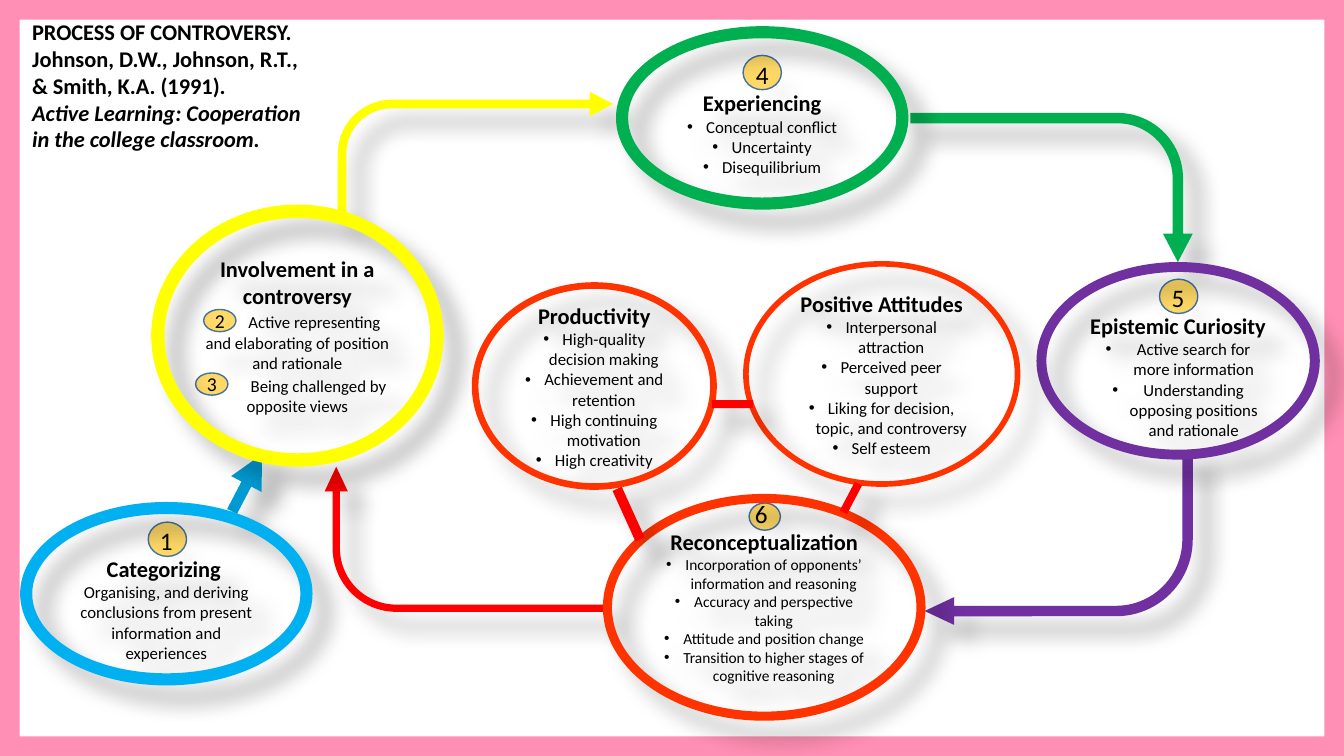
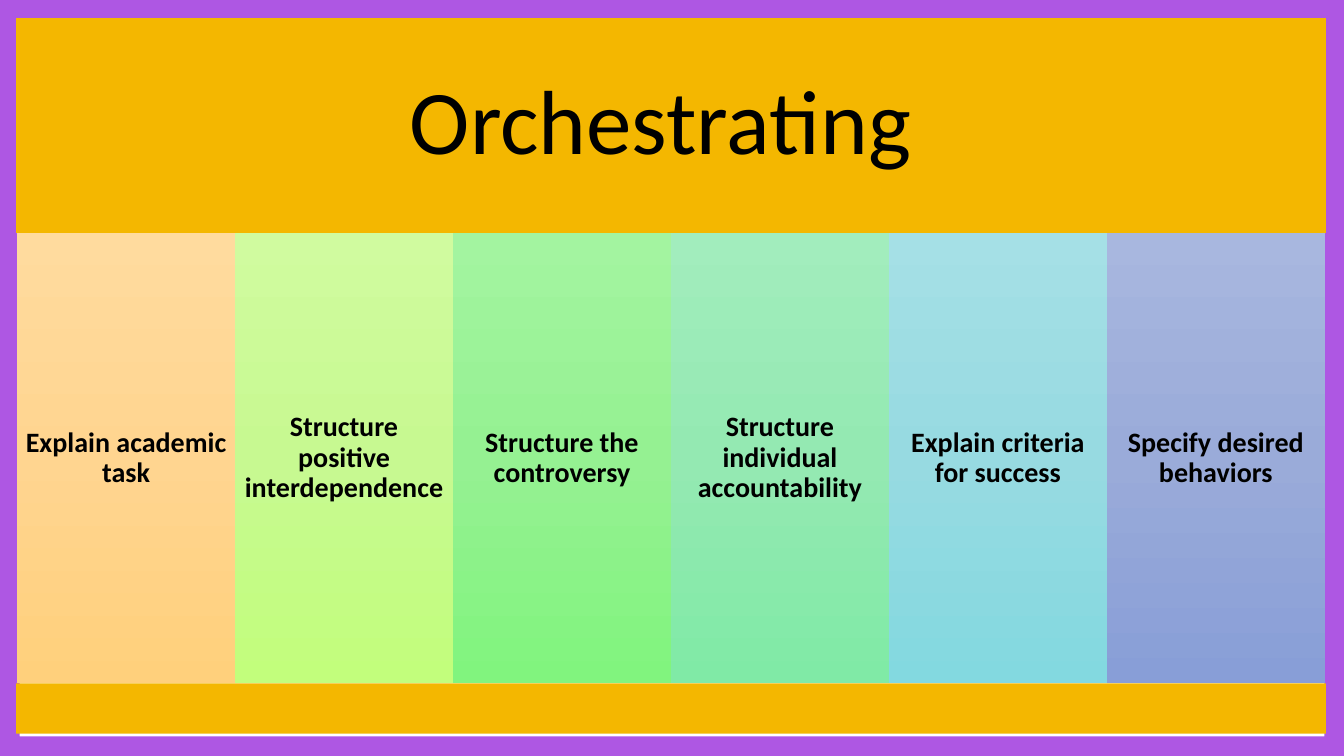
from copy import deepcopy

from lxml.etree import SubElement
from pptx import Presentation
from pptx.dml.color import RGBColor
from pptx.enum.shapes import MSO_SHAPE
from pptx.enum.text import MSO_ANCHOR, PP_ALIGN
from pptx.oxml.ns import qn
from pptx.util import Emu, Pt

# Scale and palette
PX = 9144
WIDTH, HEIGHT = 1333, 750
FONT = "Calibri"
BLACK = RGBColor(0, 0, 0)
PINK = RGBColor(0xFF, 0x8F, 0xB4)
PURPLE = RGBColor(0xAE, 0x57, 0xE3)
AMBER = RGBColor(0xF4, 0xB7, 0x00)
YELLOW = RGBColor(0xFF, 0xFF, 0x00)
GREEN = RGBColor(0x00, 0xB0, 0x50)
RED = RGBColor(0xFF, 0x00, 0x00)
ORANGE = RGBColor(0xFF, 0x33, 0x00)
VIOLET = RGBColor(0x70, 0x30, 0xA0)
SKY = RGBColor(0x00, 0xB0, 0xF0)
BLUE = RGBColor(0x00, 0x9B, 0xD2)
GOLD = RGBColor(0xFF, 0xD9, 0x66)
BADGE_EDGE = RGBColor(0x43, 0x73, 0x9E)

# Format values: font settings and paragraph indents (left, first line)
NUMBER = {"size": Pt(18)}
STEP_NUMBER = {"size": Pt(14)}
HEADING = {"size": Pt(16), "bold": True}
BOOK = {"size": Pt(16), "bold": True, "italic": True}
BODY = {"size": Pt(12)}
SMALL = {"size": Pt(11)}
BANNER = {"size": Pt(65)}
COLUMN = {"size": Pt(20), "bold": True}
BULLET, WIDE_BULLET = (19, -19), (31, -31)

# Slide 1: arrows as (preset, box, rotation, adjustments, colour)
BENT, BAR = MSO_SHAPE.BENT_ARROW, MSO_SHAPE.PENTAGON
ARROWS = [
    (BENT, (335, 91, 273, 122), 0, (0.07, 0.1, 0.19, 0.44), YELLOW),
    (BENT, (969, 46, 148, 280), 90, (0.07, 0.1, 0.19, 0.44), GREEN),
    (BENT, (388, 397, 144, 276), 270, (0.05, 0.08, 0.17, 0.44), RED),
    (BENT, (917, 447, 266, 173), 180, (0.06, 0.08, 0.17, 0.44), VIOLET),
    (MSO_SHAPE.RIGHT_ARROW, (213, 462, 64, 34), 297.6, (0.32, 0.98), BLUE),
]
LINKS = [
    (BAR, (706, 397, 41, 8), 180, (0,), RED),
    (BAR, (828, 490, 32, 8), 297.8, (0,), RED),
    (BAR, (596, 505, 55, 10), 245.6, (0,), RED),
]

# Badges as (box, number shown inside)
BADGES = [
    ((147, 518, 38, 34), ""),
    ((202, 307, 32, 22), "2"),
    ((194, 370, 32, 22), "3"),
    ((737, 55, 38, 34), ""),
    ((1150, 277, 38, 34), ""),
    ((743, 499, 31, 27), ""),
]


def bullets(style, indent, *texts):
    return [(text, style, indent) for text in texts]


# Rings as (box, thickness, colour, bottom inset, lines)
RINGS = [
    ((20, 498, 290, 182), 0.066, SKY, 5, [
        ("1", NUMBER), ("Categorizing ", HEADING),
        ("Organising, and deriving conclusions from present information "
         "and experiences", BODY)]),
    ((150, 203, 290, 260), 0.051, YELLOW, 5, [
        ("Involvement in a controversy", HEADING),
        ("Active representing and elaborating of position and rationale",
         BODY, (0, 34), 2),
        ("Being challenged by opposite views", BODY, (0, 42), 2)]),
    ((611, 26, 290, 182), 0.066, GREEN, 5, [
        ("4", NUMBER), ("Experiencing", HEADING),
        *bullets(BODY, BULLET, "Conceptual conflict", "Uncertainty",
                 "Disequilibrium")]),
    ((1028, 260, 281, 196), 0.05, VIOLET, 5, [
        ("5", NUMBER), ("Epistemic Curiosity ", HEADING),
        *bullets(BODY, WIDE_BULLET, "Active search for more information",
                 "Understanding opposing positions and rationale")]),
    ((468, 280, 243, 206), 0.032, ORANGE, 5, [
        ("Productivity", HEADING),
        *bullets(BODY, BULLET, "High-quality decision making",
                 "Achievement and retention", "High continuing motivation",
                 "High creativity")]),
    ((598, 490, 320, 225), 0.04, ORANGE, 36, [
        ("6 ", NUMBER), ("Reconceptualization", HEADING),
        *bullets(SMALL, BULLET,
                 "Incorporation of opponents’ information and reasoning",
                 "Accuracy and perspective taking",
                 "Attitude and position change",
                 "Transition to higher stages of cognitive reasoning")]),
    ((737, 259, 275, 224), 0.025, ORANGE, 5, [
        ("Positive Attitudes", HEADING),
        *bullets(BODY, BULLET, "Interpersonal attraction",
                 "Perceived peer support",
                 "Liking for decision, topic, and controversy",
                 "Self esteem")]),
]
CITATION = [
    ("PROCESS OF CONTROVERSY. Johnson, D.W., Johnson, R.T., "
     "& Smith, K.A. (1991).", HEADING),
    ("Active Learning: Cooperation in the college classroom.", BOOK),
]

# Slide 2: columns as (label, gradient from top to bottom)
COLUMNS = [
    ("Explain academic task", ("FFDB9E", "FFD590", "FFD07C")),
    ("Structure positive interdependence", ("D0FB9F", "C7F991", "C2FE7C")),
    ("Structure the controversy", ("A3F4A0", "95F192", "81F47E")),
    ("Structure individual accountability", ("A2EDBD", "94E9B2", "80EAA6")),
    ("Explain criteria for success", ("A5E0E6", "97DAE1", "83D9E0")),
    ("Specify desired behaviors", ("A8B7DF", "9AABD9", "889ED7")),
]
BAND_LEFT, BAND_WIDTH = 16, 1299
COLUMNS_LEFT, COLUMNS_RIGHT = 17, 1314
COLUMNS_TOP, COLUMNS_BOTTOM = 231, 678


def place(box):
    return [Emu(round(length * PX)) for length in box]


def write(holder, lines, insets=(10, 5, 10, 5), align=PP_ALIGN.CENTER,
          anchor=MSO_ANCHOR.MIDDLE, spacing=None):
    """Fill a text frame; a line is (text, font, indent, space before)."""
    frame = holder.text_frame
    left, top, right, bottom = place(insets)
    settings = {"word_wrap": True, "vertical_anchor": anchor,
                "margin_left": left, "margin_top": top,
                "margin_right": right, "margin_bottom": bottom}
    for name, value in settings.items():
        setattr(frame, name, value)
    for index, (text, style, *layout) in enumerate(lines):
        para = frame.add_paragraph() if index else frame.paragraphs[0]
        para.alignment = align
        if spacing:
            para.line_spacing = spacing
        if layout:
            margin, first = layout[0]
            props = para._p.get_or_add_pPr()
            props.set("marL", str(margin * PX))
            props.set("indent", str(first * PX))
            if first < 0:
                SubElement(props, qn("a:buFont"), typeface="Arial")
                SubElement(props, qn("a:buChar"), char="•")
            else:
                para.space_before = Pt(layout[1])
        run = para.add_run()
        run.text = text
        for name, value in {"name": FONT, **style}.items():
            setattr(run.font, name, value)
        run.font.color.rgb = BLACK


def add_figure(slide, preset, box, colour=None, adjust=(), rotation=0,
               soft=False):
    """Add a preset shape without outline, with an optional soft shadow."""
    figure = slide.shapes.add_shape(preset, *place(box))
    figure.rotation = rotation
    for index, value in enumerate(adjust):
        figure.adjustments[index] = value
    if colour is not None:
        figure.fill.solid()
        figure.fill.fore_color.rgb = colour
    figure.line.fill.background()
    figure.shadow.inherit = False
    if soft:
        effects = figure._element.spPr.find(qn("a:effectLst"))
        shadow = SubElement(effects, qn("a:outerShdw"), blurRad=str(Pt(15)),
                            dist=str(Pt(18)), dir="2700000", algn="tl",
                            rotWithShape="0")
        black = SubElement(shadow, qn("a:srgbClr"), val="000000")
        SubElement(black, qn("a:alpha"), val="30000")
    return figure


def add_border(slide, colour):
    add_figure(slide, MSO_SHAPE.FRAME, (0, 0, WIDTH, HEIGHT), colour, (0.026,))


def shade(figure, colours):
    figure.fill.gradient()
    figure.fill.gradient_angle = 270
    stops = figure._element.spPr.find(".//" + qn("a:gsLst"))
    stops.insert(1, deepcopy(stops[0]))
    for index, stop in enumerate(figure.fill.gradient_stops):
        stop.position = index / 2
        stop.color.rgb = RGBColor.from_string(colours[index])


def add_arrows(slide, arrows):
    for preset, box, rotation, adjust, colour in arrows:
        add_figure(slide, preset, box, colour, adjust, rotation, soft=True)


def build_process(slide):
    add_arrows(slide, ARROWS)
    add_border(slide, PINK)
    # Numbered badges lie behind the rings
    for box, number in BADGES:
        badge = add_figure(slide, MSO_SHAPE.OVAL, box, GOLD)
        badge.line.color.rgb = BADGE_EDGE
        badge.line.width = Pt(1)
        if number:
            write(badge, [(number, STEP_NUMBER)], (0, 0, 0, 0))
    for box, thickness, colour, bottom, lines in RINGS:
        ring = add_figure(slide, MSO_SHAPE.DONUT, box, colour, (thickness,),
                          soft=True)
        write(ring, lines, (10, 5, 10, bottom))
    add_arrows(slide, LINKS)
    citation = slide.shapes.add_textbox(*place((22, 13, 288, 172)))
    write(citation, CITATION, align=PP_ALIGN.LEFT, anchor=MSO_ANCHOR.TOP)


def build_orchestrating(slide):
    add_border(slide, PURPLE)
    banner = add_figure(slide, MSO_SHAPE.RECTANGLE,
                        (BAND_LEFT, 18, BAND_WIDTH, 213), AMBER)
    write(banner, [("Orchestrating ", BANNER)], (27,) * 4, spacing=0.9)
    # Equal columns between the two bands
    step = (COLUMNS_RIGHT - COLUMNS_LEFT) / len(COLUMNS)
    for index, (label, colours) in enumerate(COLUMNS):
        column = add_figure(slide, MSO_SHAPE.RECTANGLE, (
            COLUMNS_LEFT + index * step, COLUMNS_TOP,
            step, COLUMNS_BOTTOM - COLUMNS_TOP))
        shade(column, colours)
        write(column, [(label, COLUMN)], (8,) * 4, spacing=0.9)
    add_figure(slide, MSO_SHAPE.RECTANGLE,
               (BAND_LEFT, COLUMNS_BOTTOM, BAND_WIDTH, 50), AMBER)


def main():
    deck = Presentation()
    deck.slide_width, deck.slide_height = place((WIDTH, HEIGHT))
    for build in (build_process, build_orchestrating):
        build(deck.slides.add_slide(deck.slide_layouts[6]))
    deck.save("out.pptx")


if __name__ == "__main__":
    main()
